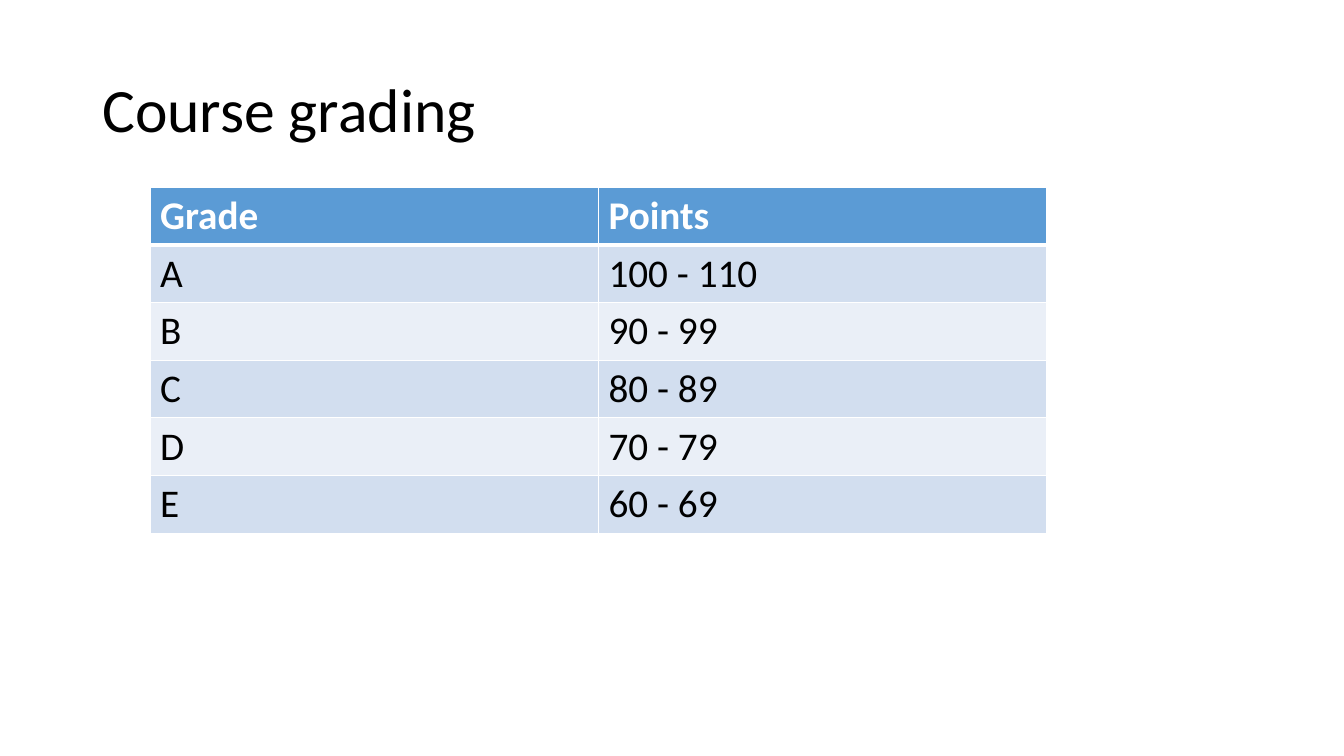
import lxml.etree
import pptx
import pptx.dml.color
import pptx.enum.text
import pptx.oxml.ns
import pptx.util

PX = 9525  # EMU per px, 96 px to the inch

THEME = {
    "font": "Calibri",
    "title_size": 44,
    "table_size": 28,
    "text": "000000",
    "header_text": "FFFFFF",
    "header_fill": "5B9BD5",
    "bands": ["D2DEEF", "EAEFF7"],
    "border": "FFFFFF",
}

GRADES = [
    ("Grade", "Points"),
    ("A", "100 - 110"),
    ("B", "90 - 99"),
    ("C", "80 - 89"),
    ("D", "70 - 79"),
    ("E", "60 - 69"),
]
TABLE_LEFT, TABLE_TOP, COLUMN_WIDTH, ROW_HEIGHT = 143, 178, 427, 55


def add_run(p, text, size, color, bold=False):
    r = p.add_run()
    r.text = text
    r.font.name = THEME["font"]
    r.font.size = pptx.util.Pt(size)
    r.font.bold = bold
    r.font.color.rgb = pptx.dml.color.RGBColor.from_string(color)


def add_border(cell, side, points):
    """Draw one side (L, R, T or B) of a cell; call before filling the cell."""
    qn = pptx.oxml.ns.qn
    tcPr = cell._tc.get_or_add_tcPr()
    ln = lxml.etree.SubElement(tcPr, qn(f"a:ln{side}"), w=str(pptx.util.Pt(points)))
    fill = lxml.etree.SubElement(ln, qn("a:solidFill"))
    lxml.etree.SubElement(fill, qn("a:srgbClr"), val=THEME["border"])


prs = pptx.Presentation()
prs.slide_width = 1280 * PX
prs.slide_height = 720 * PX
slide = prs.slides.add_slide(prs.slide_layouts[6])

# Title
sp = slide.shapes.add_textbox(88 * PX, 38 * PX, 1104 * PX, 139 * PX)
tf = sp.text_frame
tf.word_wrap = True
tf.vertical_anchor = pptx.enum.text.MSO_ANCHOR.MIDDLE
p = tf.paragraphs[0]
p.line_spacing = 0.9
add_run(p, "Course grading", THEME["title_size"], THEME["text"])

# Grade table
rows, cols = len(GRADES), len(GRADES[0])
table = slide.shapes.add_table(
    rows, cols, TABLE_LEFT * PX, TABLE_TOP * PX,
    cols * COLUMN_WIDTH * PX, rows * ROW_HEIGHT * PX,
).table

for i, values in enumerate(GRADES):
    header = i == 0
    fill = THEME["header_fill"] if header else THEME["bands"][(i - 1) % 2]
    color = THEME["header_text"] if header else THEME["text"]
    widths = {"L": 1, "R": 1, "T": 3 if i == 1 else 1, "B": 3 if header else 1}
    for j, value in enumerate(values):
        cell = table.cell(i, j)
        for side, points in widths.items():
            add_border(cell, side, points)
        cell.fill.solid()
        cell.fill.fore_color.rgb = pptx.dml.color.RGBColor.from_string(fill)
        add_run(cell.text_frame.paragraphs[0], value, THEME["table_size"], color, header)

prs.save("out.pptx")
